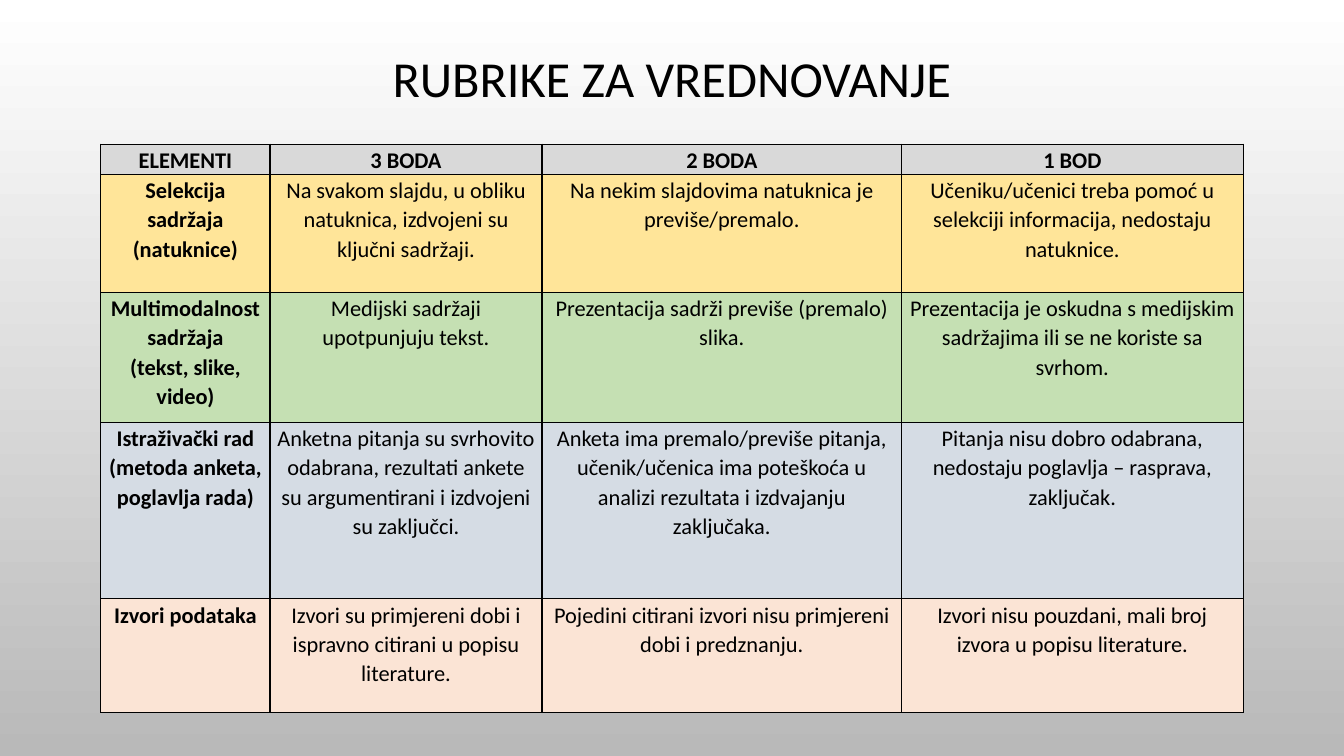
from dataclasses import dataclass

from lxml.etree import SubElement
from pptx import Presentation
from pptx.dml.color import RGBColor
from pptx.enum.text import MSO_ANCHOR, PP_ALIGN
from pptx.oxml.ns import qn
from pptx.util import Inches, Pt


@dataclass(frozen=True)
class Theme:
    font: str = "Calibri"
    ink: str = "000000"
    bg_top: str = "FFFFFF"
    bg_bottom: str = "B9B9B9"
    row_fills: tuple = ("D9D9D9", "FFE599", "C5E0B3", "D5DCE4", "FBE4D5")
    title_size: int = 36
    cell_size: int = 16
    border: int = 1


THEME = Theme()
COL_WIDTHS = (1.68, 2.7, 3.57, 3.39)
ROW_HEIGHTS = (0.3, 1.17, 1.29, 1.75, 1.13)
RUBRIC = (
    ("ELEMENTI", "3 BODA", "2 BODA", "1 BOD"),
    (
        "Selekcija sadržaja\n(natuknice)",
        "Na svakom slajdu, u obliku natuknica, izdvojeni su ključni sadržaji.",
        "Na nekim slajdovima natuknica je previše/premalo.",
        "Učeniku/učenici treba pomoć u selekciji informacija, nedostaju natuknice.",
    ),
    (
        "Multimodalnost sadržaja\n(tekst, slike, video)",
        "Medijski sadržaji upotpunjuju tekst.",
        "Prezentacija sadrži previše (premalo) slika.",
        "Prezentacija je oskudna s medijskim sadržajima ili se ne koriste sa svrhom.",
    ),
    (
        "Istraživački rad\n(metoda anketa, poglavlja rada)",
        "Anketna pitanja su svrhovito odabrana, rezultati ankete su argumentirani i izdvojeni su zaključci.",
        "Anketa ima premalo/previše pitanja, učenik/učenica ima poteškoća u analizi rezultata i izdvajanju zaključaka.",
        "Pitanja nisu dobro odabrana, nedostaju poglavlja – rasprava, zaključak.",
    ),
    (
        "Izvori podataka",
        "Izvori su primjereni dobi i ispravno citirani u popisu literature.",
        "Pojedini citirani izvori nisu primjereni dobi i predznanju.",
        "Izvori nisu pouzdani, mali broj izvora u popisu literature.",
    ),
)


def format_text(tf, size, bold, spacing):
    for p in tf.paragraphs:
        p.alignment = PP_ALIGN.CENTER
        p.line_spacing = spacing
        for r in p.runs:
            r.font.name = THEME.font
            r.font.size = Pt(size)
            r.font.bold = bold
            r.font.color.rgb = RGBColor.from_string(THEME.ink)


def add_borders(cell):
    tcPr = cell._tc.get_or_add_tcPr()
    for side in ("a:lnL", "a:lnR", "a:lnT", "a:lnB"):
        ln = SubElement(tcPr, qn(side), w=str(Pt(THEME.border)))
        fill = SubElement(ln, qn("a:solidFill"))
        SubElement(fill, qn("a:srgbClr"), val=THEME.ink)


def set_background(s):
    fill = s.background.fill
    fill.gradient()
    fill.gradient_angle = 270
    for stop, color in zip(fill.gradient_stops, (THEME.bg_top, THEME.bg_bottom)):
        stop.color.rgb = RGBColor.from_string(color)


def place_title(s, text, left, top, width, height):
    sp = s.shapes.title
    sp.left, sp.top = Inches(left), Inches(top)
    sp.width, sp.height = Inches(width), Inches(height)
    tf = sp.text_frame
    tf.text = text
    tf.vertical_anchor = MSO_ANCHOR.MIDDLE
    format_text(tf, THEME.title_size, False, 0.9)


def fill_cell(cell, text, color, bold):
    cell.margin_left = cell.margin_right = Inches(0.07)
    cell.margin_top, cell.margin_bottom = Inches(0.01), Inches(0)
    cell.text_frame.text = text
    format_text(cell.text_frame, THEME.cell_size, bold, 1.07)
    add_borders(cell)
    cell.fill.solid()
    cell.fill.fore_color.rgb = RGBColor.from_string(color)


def add_rubric(s, left, top, width, height):
    table = s.shapes.add_table(
        len(RUBRIC), len(COL_WIDTHS),
        Inches(left), Inches(top), Inches(width), Inches(height),
    ).table
    table.first_row = table.horz_banding = False
    for col, share in zip(table.columns, COL_WIDTHS):
        col.width = Inches(width * share / sum(COL_WIDTHS))
    for row, share in zip(table.rows, ROW_HEIGHTS):
        row.height = Inches(height * share / sum(ROW_HEIGHTS))
    for i, (texts, color) in enumerate(zip(RUBRIC, THEME.row_fills)):
        for j, text in enumerate(texts):
            fill_cell(table.cell(i, j), text, color, i == 0 or j == 0)


def build_rubric_slide(prs):
    s = prs.slides.add_slide(prs.slide_layouts[5])
    set_background(s)
    place_title(s, "RUBRIKE ZA VREDNOVANJE", 1, 0.18, 11.33, 1.25)
    add_rubric(s, 1, 1.43, 11.33, sum(ROW_HEIGHTS))


def main():
    prs = Presentation()
    prs.slide_width, prs.slide_height = Inches(13.33), Inches(7.5)
    build_rubric_slide(prs)
    prs.save("out.pptx")


if __name__ == "__main__":
    main()
